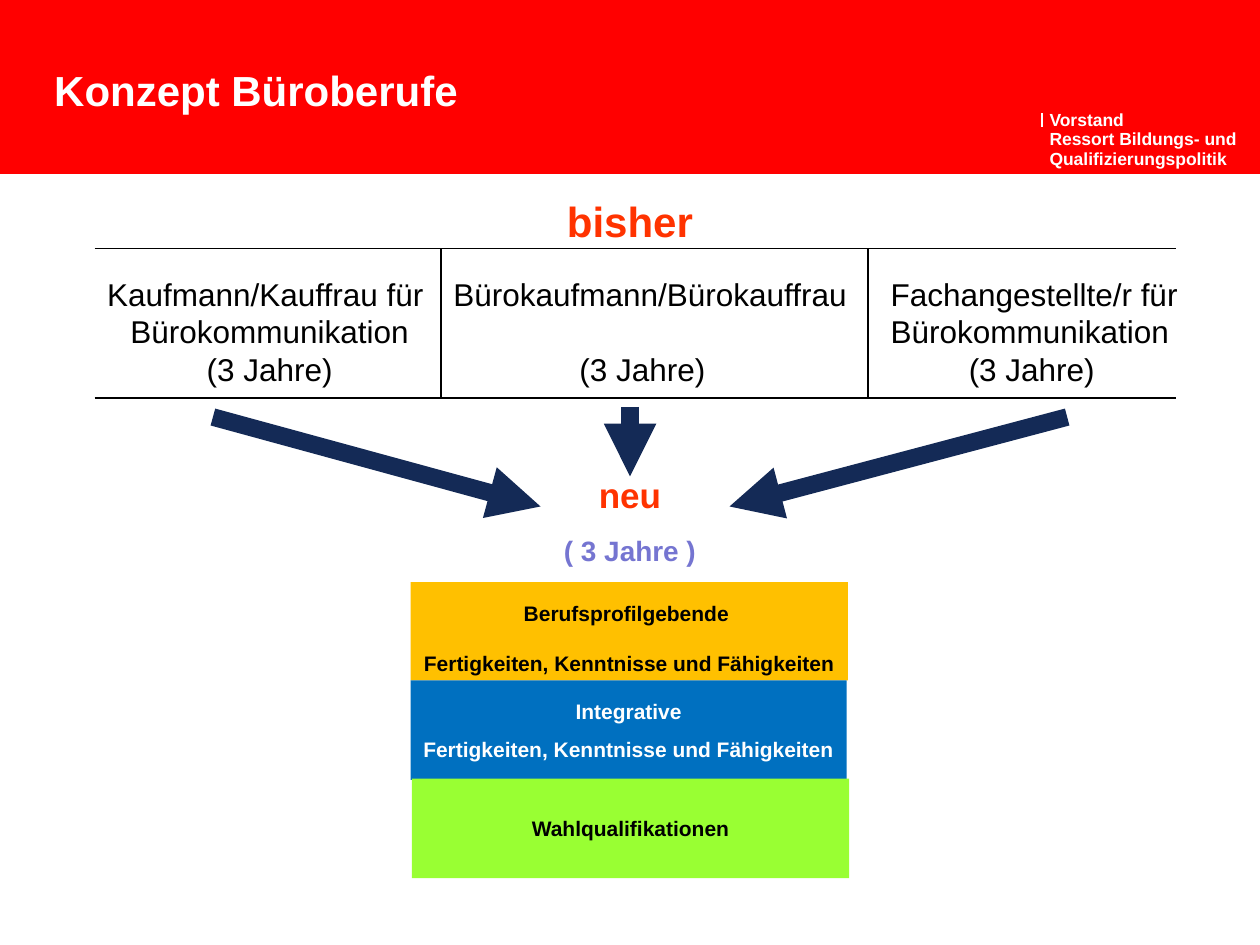
from dataclasses import dataclass

from lxml.etree import SubElement
from pptx import Presentation
from pptx.dml.color import RGBColor
from pptx.enum.shapes import MSO_CONNECTOR, MSO_SHAPE
from pptx.enum.text import MSO_ANCHOR, PP_ALIGN
from pptx.oxml.ns import qn
from pptx.util import Inches, Pt


@dataclass(frozen=True)
class Theme:
    font: str = "Arial"
    white: str = "FFFFFF"
    black: str = "000000"
    header: str = "FF0000"
    accent: str = "FF3300"
    duration: str = "7575D1"
    arrow: str = "142A56"
    profile: str = "FFC000"
    integrative: str = "0070C0"
    elective: str = "99FF33"
    heading: int = 24
    subheading: int = 20
    occupation: int = 18
    years: int = 16
    block: int = 12
    sender: int = 10


class SlideBuilder:
    columns, rows = 100, 75

    def __init__(self, deck, theme):
        self.theme = theme
        self.column = deck.slide_width / self.columns
        self.row = deck.slide_height / self.rows
        self.slide = deck.slides.add_slide(deck.slide_layouts[5])
        self.shapes = self.slide.shapes

    def place(self, left, top, width, height):
        return (round(left * self.column), round(top * self.row),
                round(width * self.column), round(height * self.row))

    def set_text(self, frame, lines, size, color, bold=True, align=PP_ALIGN.CENTER,
                 anchor=MSO_ANCHOR.TOP, wrap=True, inset=True, leading=None, gap=0):
        frame.word_wrap = wrap
        frame.vertical_anchor = anchor
        if not inset:
            frame.margin_left = frame.margin_right = 0
            frame.margin_top = frame.margin_bottom = 0
        for index, line in enumerate(lines):
            paragraph = frame.paragraphs[0] if index == 0 else frame.add_paragraph()
            paragraph.text = line
            paragraph.alignment = align
            paragraph.line_spacing = leading
            if index and gap:
                paragraph.space_before = Pt(gap)
            font = paragraph.font
            font.name, font.size, font.bold = self.theme.font, Pt(size), bold
            font.color.rgb = RGBColor.from_string(color)
        return frame

    def title(self, text, box):
        heading = self.shapes.title
        heading.left, heading.top, heading.width, heading.height = self.place(*box)
        self.set_text(heading.text_frame, [text], self.theme.heading, self.theme.white,
                      align=PP_ALIGN.LEFT, inset=False, leading=Pt(26))
        self.shapes.element.append(heading.element)

    def text(self, lines, box, size, color, **style):
        label = self.shapes.add_textbox(*self.place(*box))
        return self.set_text(label.text_frame, lines, size, color, **style)

    def block(self, box, fill, lines=(), color=None, **style):
        panel = self.shapes.add_shape(MSO_SHAPE.RECTANGLE, *self.place(*box))
        panel.shadow.inherit = False
        panel.fill.solid()
        panel.fill.fore_color.rgb = RGBColor.from_string(fill)
        panel.line.fill.background()
        self.set_text(panel.text_frame, lines, self.theme.block, color, **style)

    def line(self, start, end, color, width, arrow=False):
        connector = self.shapes.add_connector(
            MSO_CONNECTOR.STRAIGHT, *self.place(*start, *end))
        connector.line.color.rgb = RGBColor.from_string(color)
        connector.line.width = Pt(width)
        properties = connector.element.spPr
        if arrow:
            SubElement(properties.find(qn("a:ln")), qn("a:tailEnd"), type="triangle")
        SubElement(properties, qn("a:effectLst"))

    def indent(self, paragraph, width):
        paragraph._p.get_or_add_pPr().set("marL", str(Inches(width)))


def add_header(page, theme):
    page.block((0, 0, 100, 13.8), theme.header)
    page.title("Konzept Büroberufe", (4.3, 5.5, 70.9, 3.6))
    page.line((82.7, 9), (82.7, 10.1), theme.white, 0.8)
    page.text(["Vorstand", "Ressort Bildungs- und", "Qualifizierungspolitik"],
              (83.3, 8.8, 16.7, 4.6), theme.sender, theme.white,
              align=PP_ALIGN.LEFT, inset=False, leading=Pt(11))


def add_previous_occupations(page, theme):
    page.text(["bisher"], (0, 15, 100, 5), theme.heading, theme.accent)
    left, right, top, bottom = 7.5, 93.3, 19.7, 31.6
    for y, width in ((top, 0.75), (bottom, 1.5)):
        page.line((left, y), (right, y), theme.black, width)
    for x in (35, 68.9):
        page.line((x, top), (x, bottom), theme.black, 0.75)

    years = "(3 Jahre)"
    occupations = (
        (["Kaufmann/Kauffrau für ", "Bürokommunikation", years], 7.5, 27.8, PP_ALIGN.CENTER, 0),
        (["Bürokaufmann/Bürokauffrau", years], 35, 34.4, PP_ALIGN.LEFT, 1),
        (["Fachangestellte/r für", "Bürokommunikation", years], 69.7, 25.2, PP_ALIGN.LEFT, 0.62),
    )
    for lines, x, width, align, indent in occupations:
        frame = page.text(lines, (x, 21.3, width, 10.1), theme.occupation, theme.black,
                          bold=False, align=align, wrap=False)
        duration = frame.paragraphs[-1]
        if indent:
            page.indent(duration, indent)
        if len(lines) == 2:
            duration.space_before = Pt(21.5)


def add_new_occupation(page, theme):
    for start, end in (((16.9, 33.1), (42.9, 40.2)),
                       ((84.7, 33.1), (57.9, 40.2)),
                       ((50, 32.3), (50, 37.8))):
        page.line(start, end, theme.arrow, 10, arrow=True)
    page.text(["neu"], (0, 37.1, 100, 4.4), theme.subheading, theme.accent)
    page.text(["( 3 Jahre )"], (0, 39.1, 100, 6.4), theme.years, theme.duration,
              anchor=MSO_ANCHOR.BOTTOM)

    skills = "Fertigkeiten, Kenntnisse und Fähigkeiten"
    page.block((32.6, 46.2, 34.7, 7.8), theme.profile, ["Berufsprofilgebende ", skills],
               theme.black, leading=1.5, gap=7)
    page.block((32.6, 54, 34.6, 7.9), theme.integrative, ["Integrative", skills],
               theme.white, anchor=MSO_ANCHOR.MIDDLE, wrap=False, gap=7)
    page.block((32.7, 61.8, 34.7, 7.9), theme.elective, ["Wahlqualifikationen"],
               theme.black, anchor=MSO_ANCHOR.MIDDLE, wrap=False)


def main():
    deck = Presentation()
    deck.slide_width, deck.slide_height = Inches(10), Inches(7.5)
    theme = Theme()
    page = SlideBuilder(deck, theme)
    add_header(page, theme)
    add_previous_occupations(page, theme)
    add_new_occupation(page, theme)
    deck.save("out.pptx")


if __name__ == "__main__":
    main()
